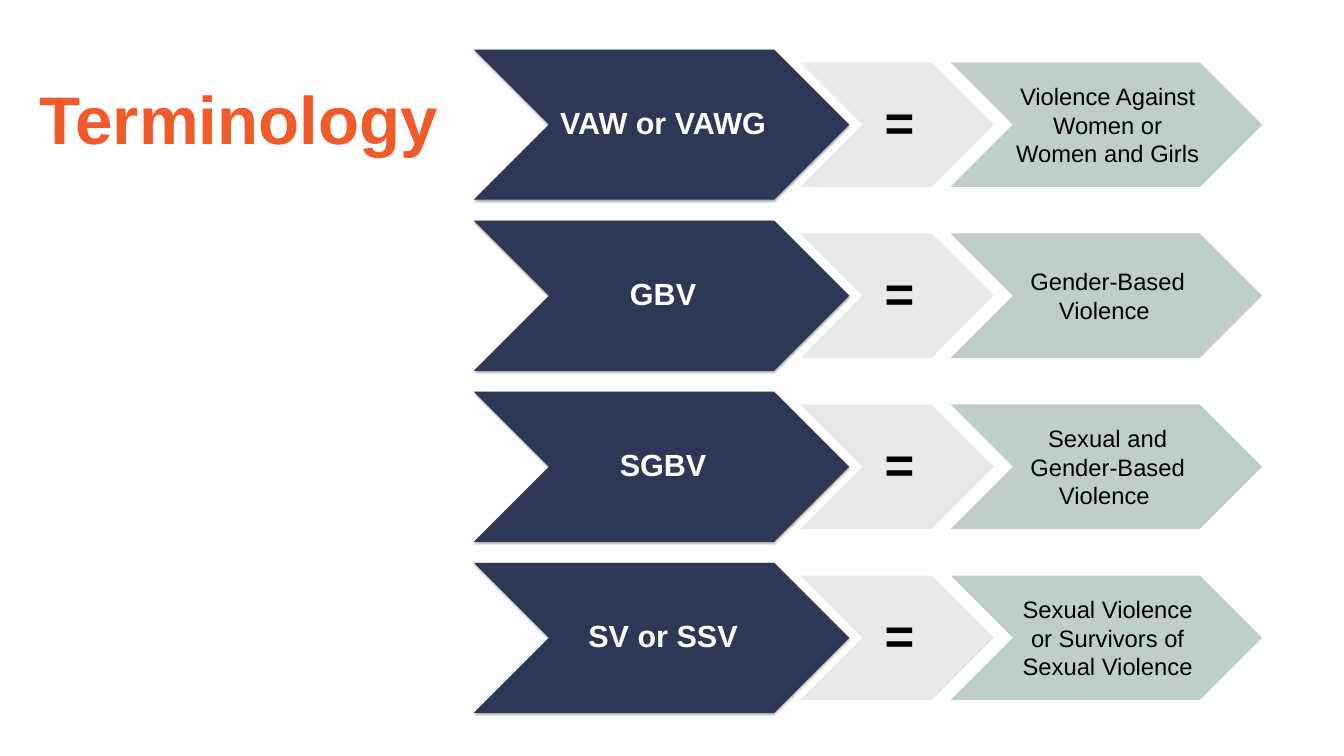
import lxml.etree
import pptx
import pptx.dml.color
import pptx.enum.shapes
import pptx.enum.text
import pptx.oxml.ns
import pptx.util

Cm = pptx.util.Cm
ALIGN = pptx.enum.text.PP_ALIGN
ANCHOR = pptx.enum.text.MSO_ANCHOR


class Theme:
    font = "Arial"
    orange, navy, mist, sage = "F15A29", "2E3856", "E6EBE9", "C0CEC8"
    white, black = "FFFFFF", "000000"
    title_size, equals_size, term_size, meaning_size = 79.2, 60, 36, 28


def write_text(shape, text, size, color, bold=False, align=ALIGN.CENTER,
               anchor=ANCHOR.MIDDLE, spacing=1.0, insets=(0, 0, 0, 0)):
    """Fill a shape with one formatted paragraph; insets are left, top, right, bottom in cm."""
    frame = shape.text_frame
    frame.word_wrap = True
    frame.vertical_anchor = anchor
    frame.margin_left, frame.margin_top, frame.margin_right, frame.margin_bottom = map(Cm, insets)
    paragraph = frame.paragraphs[0]
    paragraph.alignment = align
    paragraph.line_spacing = spacing
    run = paragraph.add_run()
    run.text = text
    run.font.name = Theme.font
    run.font.size = pptx.util.Pt(size)
    run.font.bold = bold
    run.font.color.rgb = pptx.dml.color.RGBColor.from_string(color)


def add_soft_shadow(shape):
    qn = pptx.oxml.ns.qn
    effects = shape._element.spPr.find(qn("a:effectLst"))
    shadow = lxml.etree.SubElement(effects, qn("a:outerShdw"), blurRad="39370", dist="20320",
                                   dir="5400000", rotWithShape="0")
    tint = lxml.etree.SubElement(shadow, qn("a:srgbClr"), val=Theme.black)
    lxml.etree.SubElement(tint, qn("a:alpha"), val="38000")


deck = pptx.Presentation()
deck.slide_width, deck.slide_height = Cm(55.85), Cm(31.42)
slide = deck.slides.add_slide(deck.slide_layouts[6])

title = slide.shapes.add_textbox(Cm(1.24), Cm(3), Cm(42.75), Cm(7.67))
write_text(title, "Terminology", size=Theme.title_size, color=Theme.orange, bold=True,
           align=ALIGN.LEFT, anchor=ANCHOR.TOP, insets=(0.4, 0.2, 0.4, 0.2))

meanings = {
    "VAW or VAWG": "Violence Against Women or Women and Girls",
    "GBV": "Gender-Based Violence ",
    "SGBV": "Sexual and Gender-Based Violence ",
    "SV or SSV": "Sexual Violence or Survivors of Sexual Violence",
}
# Left, width, height in cm, fill, and text format of each column
columns = [
    (19.69, 15.6, 6.24, Theme.navy, dict(size=Theme.term_size, color=Theme.white, bold=True,
                                         spacing=0.9, insets=(0.13, 0.08, 0, 0.08))),
    (33.25, 8.05, 5.18, Theme.mist, dict(size=Theme.equals_size, color=Theme.black, bold=True,
                                         spacing=0.9, insets=(0.2, 0.1, 0, 0.1))),
    (39.5, 12.95, 5.18, Theme.sage, dict(size=Theme.meaning_size, color=Theme.black,
                                         insets=(0.1, 0.05, 0, 0.05))),
]
first_middle, row_pitch = 5.18, 7.11

for row, (term, meaning) in enumerate(meanings.items()):
    middle = first_middle + row * row_pitch
    for text, (left, width, height, fill, text_format) in zip((term, "=", meaning), columns):
        chevron = slide.shapes.add_shape(pptx.enum.shapes.MSO_SHAPE.CHEVRON, Cm(left),
                                         Cm(middle - height / 2), Cm(width), Cm(height))
        chevron.shadow.inherit = False
        chevron.fill.solid()
        chevron.fill.fore_color.rgb = pptx.dml.color.RGBColor.from_string(fill)
        chevron.line.fill.background()
        write_text(chevron, text, **text_format)
        if text == term:
            add_soft_shadow(chevron)

deck.save("out.pptx")
